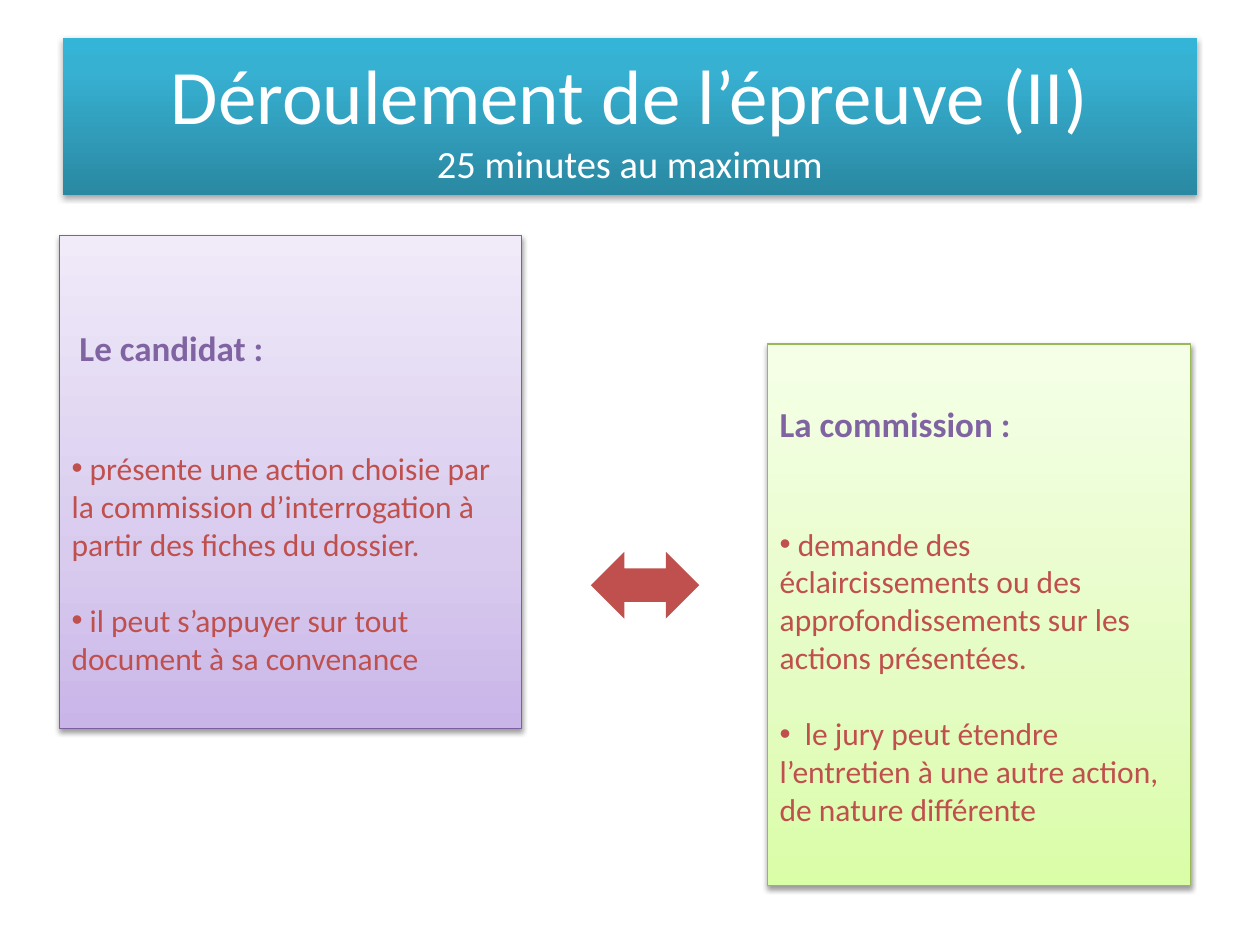
from lxml.etree import SubElement
from pptx import Presentation
from pptx.dml.color import RGBColor
from pptx.enum.shapes import MSO_SHAPE
from pptx.enum.text import MSO_ANCHOR, PP_ALIGN
from pptx.oxml.ns import qn
from pptx.util import Inches, Pt

FONT = "Calibri"
WHITE, PURPLE, RED = "FFFFFF", "8064A2", "C0504D"


def rgb(value):
    return RGBColor.from_string(value)


def add_run(p, text, size, color, bold=False):
    r = p.add_run()
    r.text = text
    r.font.name = FONT
    r.font.size = Pt(size)
    r.font.bold = bold
    r.font.color.rgb = rgb(color)


def set_gradient(sp, stops):
    """Fill from bottom (0 %) to top (100 %)."""
    sp.fill.gradient()
    sp.fill.gradient_angle = 90
    gs_lst = sp._element.spPr.find(qn("a:gradFill")).find(qn("a:gsLst"))
    for gs in list(gs_lst):
        gs_lst.remove(gs)
    for pos, color in stops:
        gs = SubElement(gs_lst, qn("a:gs"), pos=str(pos * 1000))
        SubElement(gs, qn("a:srgbClr"), val=color)


def set_shadow(sp, alpha, dist):
    sp.shadow.inherit = False
    effects = sp._element.spPr.find(qn("a:effectLst"))
    shadow = SubElement(effects, qn("a:outerShdw"), blurRad=str(Pt(3.1)),
                        dist=str(Pt(dist)), dir="5400000", rotWithShape="0")
    clr = SubElement(shadow, qn("a:srgbClr"), val="000000")
    SubElement(clr, qn("a:alpha"), val=str(alpha * 1000))


def add_box(slide, box, stops, line=None, alpha=38, dist=1.6):
    """Gradient rectangle with a soft shadow and middle-anchored text."""
    sp = slide.shapes.add_shape(MSO_SHAPE.RECTANGLE, *map(Inches, box))
    set_gradient(sp, stops)
    if line:
        sp.line.color.rgb = rgb(line)
        sp.line.width = Pt(0.75)
    else:
        sp.line.fill.background()
    set_shadow(sp, alpha, dist)
    sp.text_frame.word_wrap = True
    sp.text_frame.vertical_anchor = MSO_ANCHOR.MIDDLE
    return sp


def add_title(slide, box, title, subtitle):
    stops = [(0, "2A88A2"), (80, "37B1D2"), (100, "34B4D6")]
    sp = add_box(slide, box, stops, alpha=35, dist=1.8)
    p = sp.text_frame.paragraphs[0]
    p.alignment = PP_ALIGN.CENTER
    add_run(p, title, 44, WHITE)
    p.add_line_break()
    add_run(p, subtitle, 22, WHITE)


def add_role(slide, box, stops, line, heading, items, top=0.05):
    """Panel with a heading and bulleted items."""
    tf = add_box(slide, box, stops, line).text_frame
    tf.margin_top = Inches(top)
    p = tf.paragraphs[0]
    p.alignment = PP_ALIGN.LEFT
    add_run(p, heading, 20, PURPLE, bold=True)
    for i, item in enumerate(items):
        p = tf.add_paragraph()
        p.alignment = PP_ALIGN.LEFT
        p.space_before = Pt(22 if i else 46)
        pPr = p._p.get_or_add_pPr()
        SubElement(pPr, qn("a:buFont"), typeface="Arial")
        SubElement(pPr, qn("a:buChar"), char="•")
        add_run(p, item, 18, RED)


def add_exchange_arrow(slide, box):
    sp = slide.shapes.add_shape(MSO_SHAPE.LEFT_RIGHT_ARROW, *map(Inches, box))
    sp.fill.solid()
    sp.fill.fore_color.rgb = rgb(RED)
    sp.line.fill.background()
    sp.shadow.inherit = False


def main():
    prs = Presentation()
    prs.slide_width, prs.slide_height = Inches(10), Inches(7.5)
    slide = prs.slides.add_slide(prs.slide_layouts[6])

    # Title band
    add_title(slide, (0.5, 0.3, 9, 1.25),
              "Déroulement de l’épreuve (II)", "25 minutes au maximum")

    # Candidate
    add_role(slide, (0.47, 1.87, 3.67, 3.91),
             [(0, "C9B5E8"), (35, "D8CBEE"), (100, "F0EAF9")], "7D60A0",
             " Le candidat :",
             [" présente une action choisie par la commission "
              "d’interrogation à partir des fiches du dossier.",
              " il peut s’appuyer sur tout document à sa convenance"],
             top=0.36)

    # Exchange between both sides
    add_exchange_arrow(slide, (4.69, 4.38, 0.86, 0.53))

    # Commission
    add_role(slide, (6.09, 2.73, 3.36, 4.3),
             [(0, "DAFDA7"), (35, "E4FCC2"), (100, "F5FFE7")], "98B955",
             "La commission :",
             [" demande des éclaircissements ou des approfondissements "
              "sur les actions présentées.",
              "  le jury peut étendre l’entretien à une autre action, "
              "de nature différente"])

    prs.save("out.pptx")


if __name__ == "__main__":
    main()
